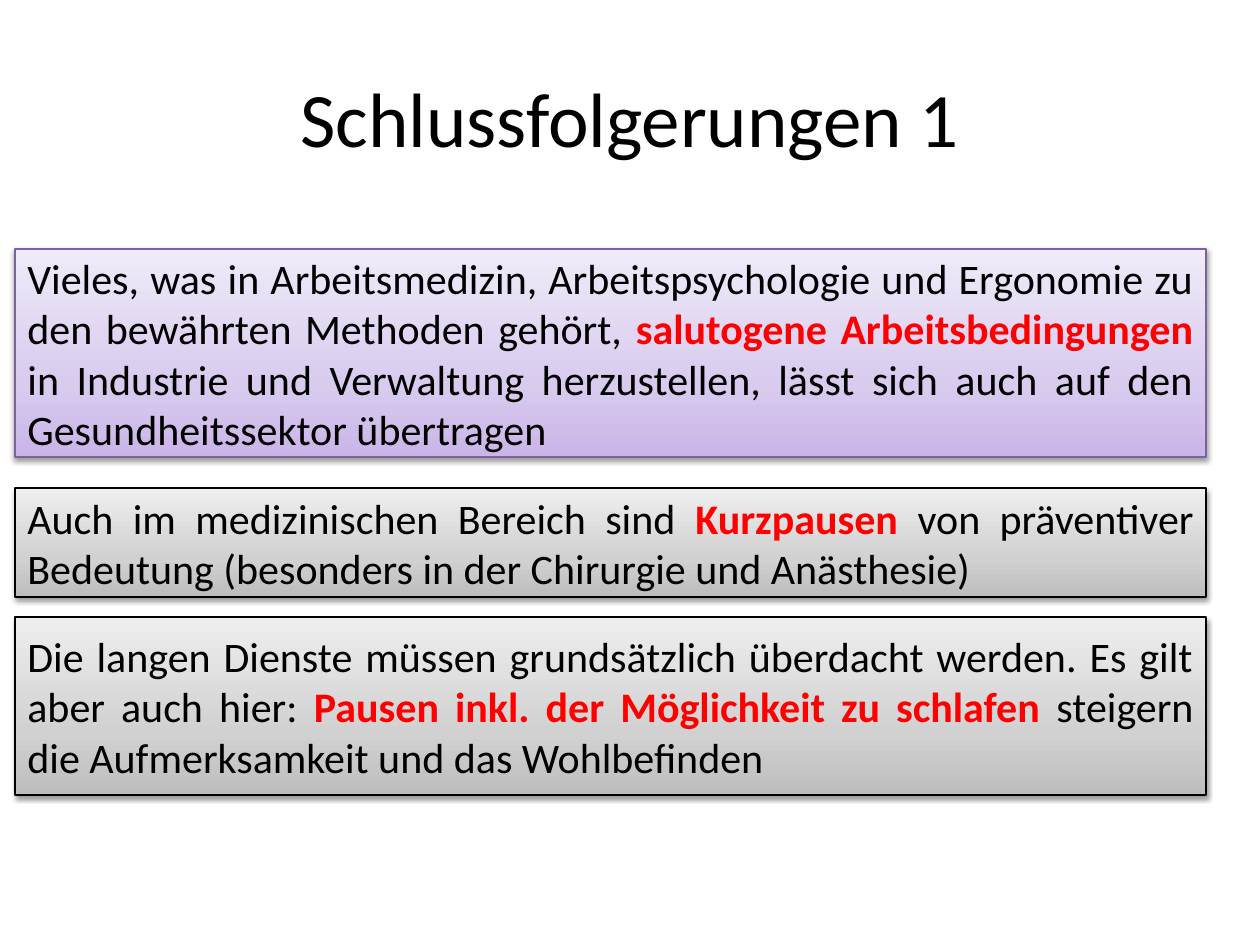
"""Build the slide "Schlussfolgerungen 1" with three shaded statement boxes."""
from copy import deepcopy

from lxml import etree
from pptx import Presentation
from pptx.dml.color import RGBColor
from pptx.enum.shapes import MSO_SHAPE
from pptx.enum.text import MSO_ANCHOR, PP_ALIGN
from pptx.oxml import parse_xml
from pptx.oxml.ns import qn
from pptx.util import Emu, Pt

RECTANGLE = MSO_SHAPE.RECTANGLE
MIDDLE = MSO_ANCHOR.MIDDLE
CENTER = PP_ALIGN.CENTER
JUSTIFY = PP_ALIGN.JUSTIFY

PX = 914400 // 126
FONT = "Calibri"
BLACK = RGBColor(0x00, 0x00, 0x00)
RED = RGBColor(0xFF, 0x00, 0x00)
PURPLE = RGBColor(0x7D, 0x60, 0xA0)
LILAC_SHADES = (RGBColor(0xC9, 0xB5, 0xE8), RGBColor(0xD8, 0xCB, 0xEE), RGBColor(0xF0, 0xEA, 0xF9))
GREY_SHADES = (RGBColor(0xBD, 0xBD, 0xBD), RGBColor(0xD1, 0xD1, 0xD1), RGBColor(0xEE, 0xEE, 0xEE))
STOPS = (0, 0.35, 1)

BOX_LEFT, BOX_WIDTH = 15, 1191
SHADOW = (
    '<a:outerShdw xmlns:a="http://schemas.openxmlformats.org/drawingml/2006/main" '
    'blurRad="40000" dist="20000" dir="5400000" rotWithShape="0">'
    '<a:srgbClr val="000000"><a:alpha val="38000"/></a:srgbClr></a:outerShdw>'
)

STATEMENTS = (
    (249, 208, LILAC_SHADES, PURPLE,
     "Vieles, was in Arbeitsmedizin, Arbeitspsychologie und Ergonomie zu den bewährten Methoden gehört, ",
     "salutogene Arbeitsbedingungen",
     " in Industrie und Verwaltung herzustellen, lässt sich auch auf den Gesundheitssektor übertragen"),
    (488, 109, GREY_SHADES, BLACK,
     "Auch im medizinischen Bereich sind ",
     "Kurzpausen",
     " von präventiver Bedeutung (besonders in der Chirurgie und Anästhesie)"),
    (617, 178, GREY_SHADES, BLACK,
     "Die langen Dienste müssen grundsätzlich überdacht werden. Es gilt aber auch hier: ",
     "Pausen inkl. der Möglichkeit zu schlafen",
     " steigern die Aufmerksamkeit und das Wohlbefinden"),
)


def px(*lengths):
    return [Emu(length * PX) for length in lengths]


def style_text(box, size, alignment):
    frame = box.text_frame
    frame.word_wrap = True
    frame.vertical_anchor = MIDDLE
    para = frame.paragraphs[0]
    para.alignment = alignment
    para.font.name = FONT
    para.font.size = Pt(size)
    para.font.color.rgb = BLACK
    return para


def add_title(page, text):
    box = page.shapes.add_textbox(*px(63, 38, 1134, 157))
    style_text(box, 44, CENTER).add_run().text = text


def shade(box, colours):
    box.fill.gradient()
    box.fill.gradient_angle = 90
    stop_list = next(box._element.spPr.iter(qn("a:gsLst")))
    stop_list.append(deepcopy(stop_list[0]))
    for stop, position, colour in zip(box.fill.gradient_stops, STOPS, colours):
        stop.position = position
        stop.color.rgb = colour


def add_shadow(box):
    box.shadow.inherit = False
    effects = box._element.spPr.find(qn("a:effectLst"))
    etree.SubElement(effects, qn("a:outerShdw")).getparent().replace(effects[0], parse_xml(SHADOW))


def add_statement(page, top, height, colours, outline, before, emphasis, after):
    box = page.shapes.add_shape(RECTANGLE, *px(BOX_LEFT, top, BOX_WIDTH, height))
    shade(box, colours)
    box.line.color.rgb = outline
    box.line.width = Pt(0.75)
    add_shadow(box)
    para = style_text(box, 24, JUSTIFY)
    for text in (before, emphasis, after):
        span = para.add_run()
        span.text = text
        if text == emphasis:
            span.font.bold = True
            span.font.color.rgb = RED


def main():
    deck = Presentation()
    deck.slide_width, deck.slide_height = px(1260, 945)
    page = deck.slides.add_slide(deck.slide_layouts[6])
    add_title(page, "Schlussfolgerungen 1")
    for statement in STATEMENTS:
        add_statement(page, *statement)
    deck.save("out.pptx")


if __name__ == "__main__":
    main()
